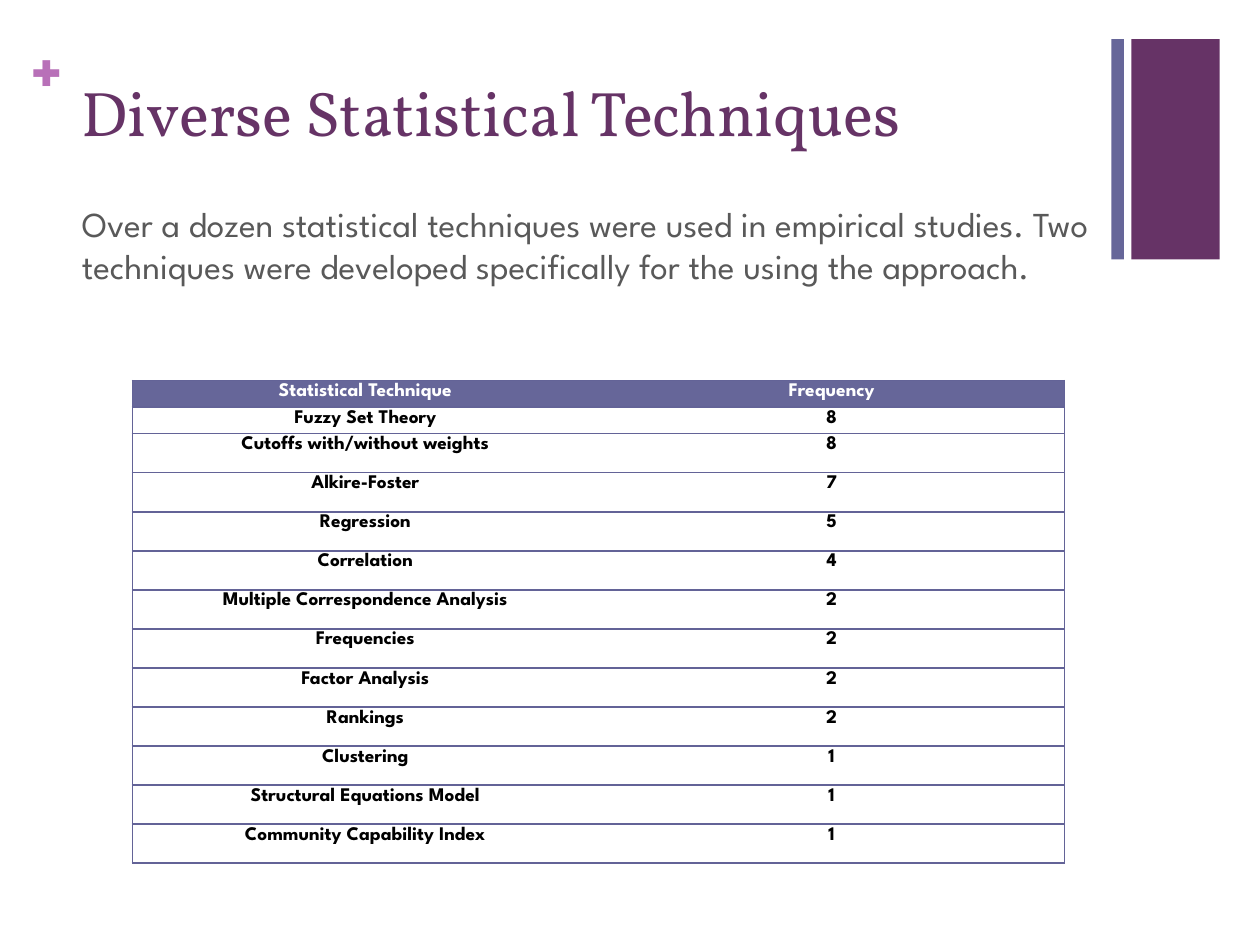
from lxml.etree import SubElement
from pptx import Presentation
from pptx.dml.color import RGBColor
from pptx.enum.shapes import MSO_SHAPE
from pptx.enum.text import MSO_ANCHOR, MSO_AUTO_SIZE, PP_ALIGN
from pptx.oxml.ns import qn
from pptx.util import Inches, Pt

PURPLE = RGBColor(0x66, 0x33, 0x66)
SLATE = RGBColor(0x66, 0x66, 0x99)
BORDER = RGBColor(0x63, 0x63, 0x97)
ORCHID = RGBColor(0xB8, 0x70, 0xB8)
GRAY = RGBColor(0x59, 0x59, 0x59)
BLACK = RGBColor(0, 0, 0)
WHITE = RGBColor(0xFF, 0xFF, 0xFF)
HEADING_FONT = "Vollkorn"
BODY_FONT = "League Spartan"
NO_TABLE_STYLE = "{2D5ABB26-0587-4C30-8999-92F81FD0307C}"


def add_run(paragraph, text, size, color, font=BODY_FONT, bold=False):
    run = paragraph.add_run()
    run.text = text
    run.font.name = font
    run.font.size = Pt(size)
    run.font.bold = bold
    run.font.color.rgb = color


def place(shape, left, top, width, height):
    shape.left, shape.top = Inches(left), Inches(top)
    shape.width, shape.height = Inches(width), Inches(height)


presentation = Presentation()
presentation.slide_width = Inches(10)
presentation.slide_height = Inches(7.5)
slide = presentation.slides.add_slide(presentation.slide_layouts[1])

for left, width, color in [(8.98, 0.7, PURPLE), (8.82, 0.1, SLATE)]:
    bar = slide.shapes.add_shape(
        MSO_SHAPE.RECTANGLE, Inches(left), Inches(0.31), Inches(width), Inches(1.75)
    )
    bar.shadow.inherit = False
    bar.fill.solid()
    bar.fill.fore_color.rgb = color
    bar.line.fill.background()

plus = slide.shapes.add_textbox(Inches(0.24), Inches(0.25), Inches(0.29), Inches(0.61))
frame = plus.text_frame
frame.word_wrap = True
frame.margin_left = frame.margin_right = frame.margin_top = frame.margin_bottom = 0
add_run(frame.paragraphs[0], "+", 36, ORCHID, bold=True)

title = slide.shapes.title
place(title, 0.55, 0.53, 8.26, 1.22)
title.text_frame.vertical_anchor = MSO_ANCHOR.TOP
title.text_frame.auto_size = MSO_AUTO_SIZE.NONE
paragraph = title.text_frame.paragraphs[0]
paragraph.alignment = PP_ALIGN.LEFT
add_run(paragraph, "Diverse Statistical Techniques", 36, PURPLE, HEADING_FONT)

body = slide.placeholders[1]
place(body, 0.55, 1.56, 8.26, 4.53)
body.text_frame.auto_size = MSO_AUTO_SIZE.NONE
paragraph = body.text_frame.paragraphs[0]
paragraph.space_before = Pt(20)
properties = paragraph._p.get_or_add_pPr()
properties.set("marL", "0")
properties.set("indent", "0")
SubElement(properties, qn("a:buNone"))
add_run(
    paragraph,
    "Over a dozen statistical techniques were used in empirical studies. "
    "Two techniques were developed specifically for the using the approach.",
    20,
    GRAY,
)

rows = [
    ("Statistical Technique", "Frequency"),
    ("Fuzzy Set Theory", "8"),
    ("Cutoffs with/without weights", "8"),
    ("Alkire-Foster", "7"),
    ("Regression", "5"),
    ("Correlation", "4"),
    ("Multiple Correspondence Analysis", "2"),
    ("Frequencies", "2"),
    ("Factor Analysis", "2"),
    ("Rankings", "2"),
    ("Clustering", "1"),
    ("Structural Equations Model", "1"),
    ("Community Capability Index", "1"),
]
table = slide.shapes.add_table(
    len(rows), 2, Inches(1.05), Inches(3.02), Inches(7.4), Inches(3.81)
).table
table.horz_banding = False
table._tbl.tblPr.find(qn("a:tableStyleId")).text = NO_TABLE_STYLE

for row_index, values in enumerate(rows):
    is_header = row_index == 0
    table.rows[row_index].height = Inches(0.2 if row_index < 2 else 0.31)
    for column_index, value in enumerate(values):
        cell = table.cell(row_index, column_index)
        cell.margin_left = cell.margin_right = Inches(0.07)
        cell.margin_top = cell.margin_bottom = 0
        outer_side = "a:lnL" if column_index == 0 else "a:lnR"
        for side in (outer_side, "a:lnT", "a:lnB"):
            line = SubElement(cell._tc.get_or_add_tcPr(), qn(side), w=str(Pt(1)))
            fill = SubElement(line, qn("a:solidFill"))
            SubElement(fill, qn("a:srgbClr"), val=str(BORDER))
        if is_header:
            cell.fill.solid()
            cell.fill.fore_color.rgb = SLATE
        else:
            cell.fill.background()
        paragraph = cell.text_frame.paragraphs[0]
        paragraph.alignment = PP_ALIGN.CENTER
        paragraph.line_spacing = 1.15
        add_run(paragraph, value, 11, WHITE if is_header else BLACK, bold=True)

presentation.save("out.pptx")
